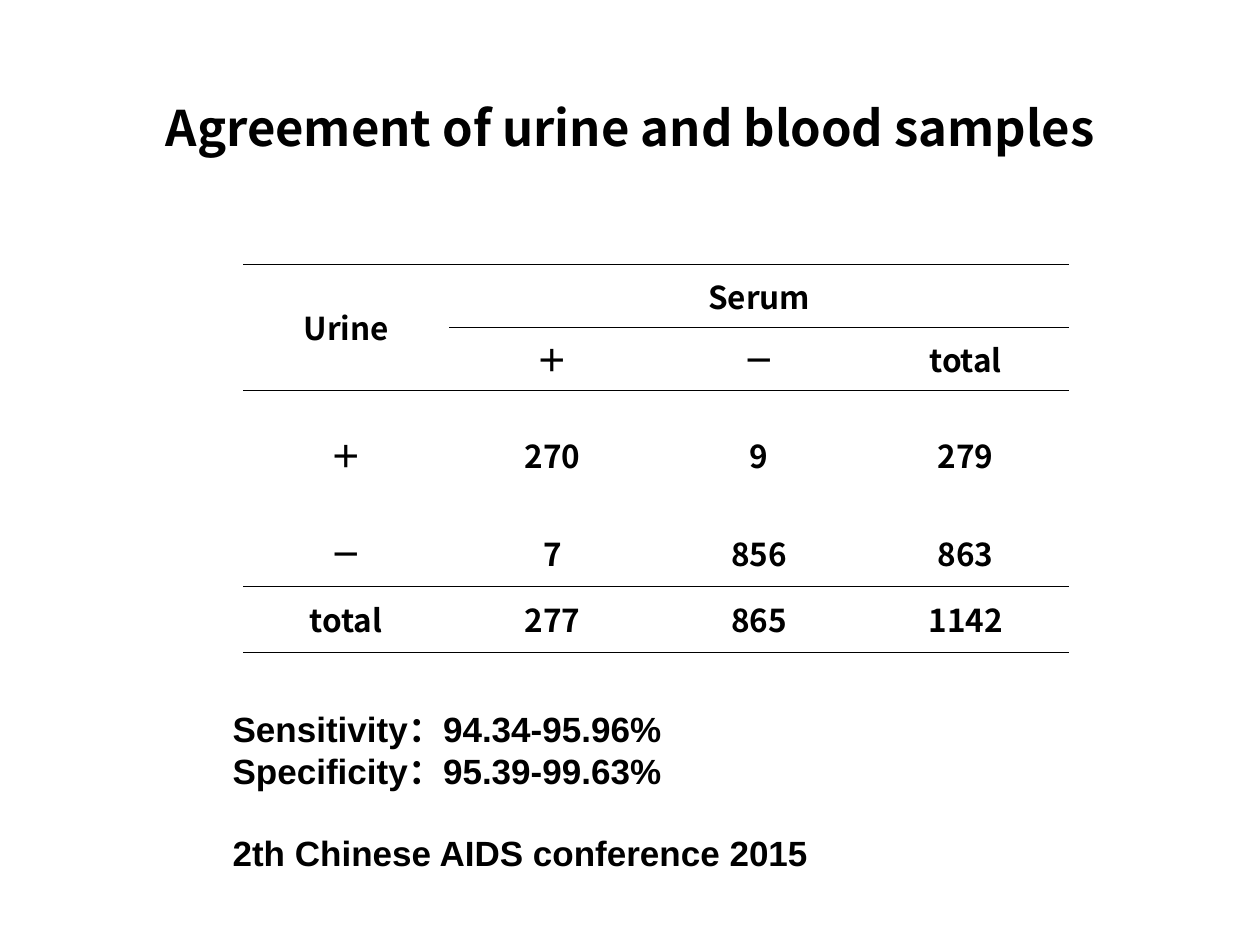
from lxml.etree import SubElement
from pptx import Presentation
from pptx.dml.color import RGBColor
from pptx.enum.text import MSO_ANCHOR, MSO_AUTO_SIZE, PP_ALIGN
from pptx.oxml.ns import qn
from pptx.util import Emu, Pt

COLORS = {"text": "000000", "rule": "000000"}
HEADING_FONT = "Noto Sans CJK SC"
BODY_FONT = "Arial"


def px(value):
    return Emu(round(value * 914400 / 126))


class SlideBuilder:
    def __init__(self, presentation):
        self.slide = presentation.slides.add_slide(presentation.slide_layouts[1])

    def style(self, paragraph, size, font, alignment, before=0):
        paragraph.alignment = alignment
        paragraph.space_before = Pt(before)
        for run in paragraph.runs:
            run.font.size = Pt(size)
            run.font.bold = True
            run.font.name = font
            run.font.color.rgb = RGBColor.from_string(COLORS["text"])
            SubElement(run.font._element, qn("a:ea"), typeface=HEADING_FONT)

    def place(self, shape, left, top, width, height):
        shape.left, shape.top = px(left), px(top)
        shape.width, shape.height = px(width), px(height)
        frame = shape.text_frame
        frame.word_wrap = True
        frame.auto_size = MSO_AUTO_SIZE.NONE
        frame.vertical_anchor = MSO_ANCHOR.TOP
        return frame

    def title(self, text, *box):
        frame = self.place(self.slide.shapes.title, *box)
        frame.text = text
        self.style(frame.paragraphs[0], 28, HEADING_FONT, PP_ALIGN.CENTER)

    def body(self, lines, *box):
        frame = self.place(self.slide.placeholders[1], *box)
        frame.text = "\n".join(text for text, before in lines)
        for paragraph, (text, before) in zip(frame.paragraphs, lines):
            self.style(paragraph, 20, BODY_FONT, PP_ALIGN.LEFT, before)
            properties = paragraph._p.get_or_add_pPr()
            properties.set("marL", "0")
            properties.set("indent", "0")
            SubElement(properties, qn("a:buNone"))

    def border(self, cell, side, visible):
        properties = cell._tc.get_or_add_tcPr()
        line = SubElement(properties, qn(f"a:ln{side}"), w=str(Pt(0.5)))
        if visible:
            fill = SubElement(line, qn("a:solidFill"))
            SubElement(fill, qn("a:srgbClr"), val=COLORS["rule"])
        else:
            SubElement(line, qn("a:noFill"))

    def table(self, rows, heights, merges, has_rule, left, top, width):
        frame = self.slide.shapes.add_table(
            len(rows), len(rows[0]), px(left), px(top), px(width), px(sum(heights)))
        table = frame.table
        table.first_row = table.horz_banding = False
        for row_index, (values, height) in enumerate(zip(rows, heights)):
            table.rows[row_index].height = px(height)
            for column_index, value in enumerate(values):
                cell = table.cell(row_index, column_index)
                cell.text = value
                cell.vertical_anchor = MSO_ANCHOR.MIDDLE
                cell.margin_top = cell.margin_bottom = 0
                self.style(cell.text_frame.paragraphs[0], 18, HEADING_FONT,
                           PP_ALIGN.CENTER, 3.6)
                self.border(cell, "L", False)
                self.border(cell, "R", False)
                self.border(cell, "T", has_rule(row_index, column_index))
                self.border(cell, "B", has_rule(row_index + 1, column_index))
                cell.fill.background()
        for first, last in merges:
            table.cell(*first).merge(table.cell(*last))


def has_rule(edge, column):
    return edge in (0, 2, 4, 5) or (edge == 1 and column > 0)


def main():
    presentation = Presentation()
    presentation.slide_width, presentation.slide_height = px(1260), px(945)
    builder = SlideBuilder(presentation)
    builder.title("Agreement of urine and blood samples", 74, 91, 1112, 97)
    rows = [
        ["Urine", "Serum", "", ""],
        ["", "＋", "－", "total"],
        ["＋", "270", "9", "279"],
        ["－", "7", "856", "863"],
        ["total", "277", "865", "1142"],
    ]
    merges = [((0, 0), (1, 0)), ((0, 1), (0, 3))]
    builder.table(rows, [63, 63, 130, 66, 66], merges, has_rule, 243, 264, 826)
    builder.body([
        ("Sensitivity：94.34-95.96%", 0),
        ("Specificity：95.39-99.63%", 0),
        ("2th Chinese AIDS conference 2015", 23),
    ], 220, 701, 966, 183)
    presentation.save("out.pptx")


if __name__ == "__main__":
    main()
